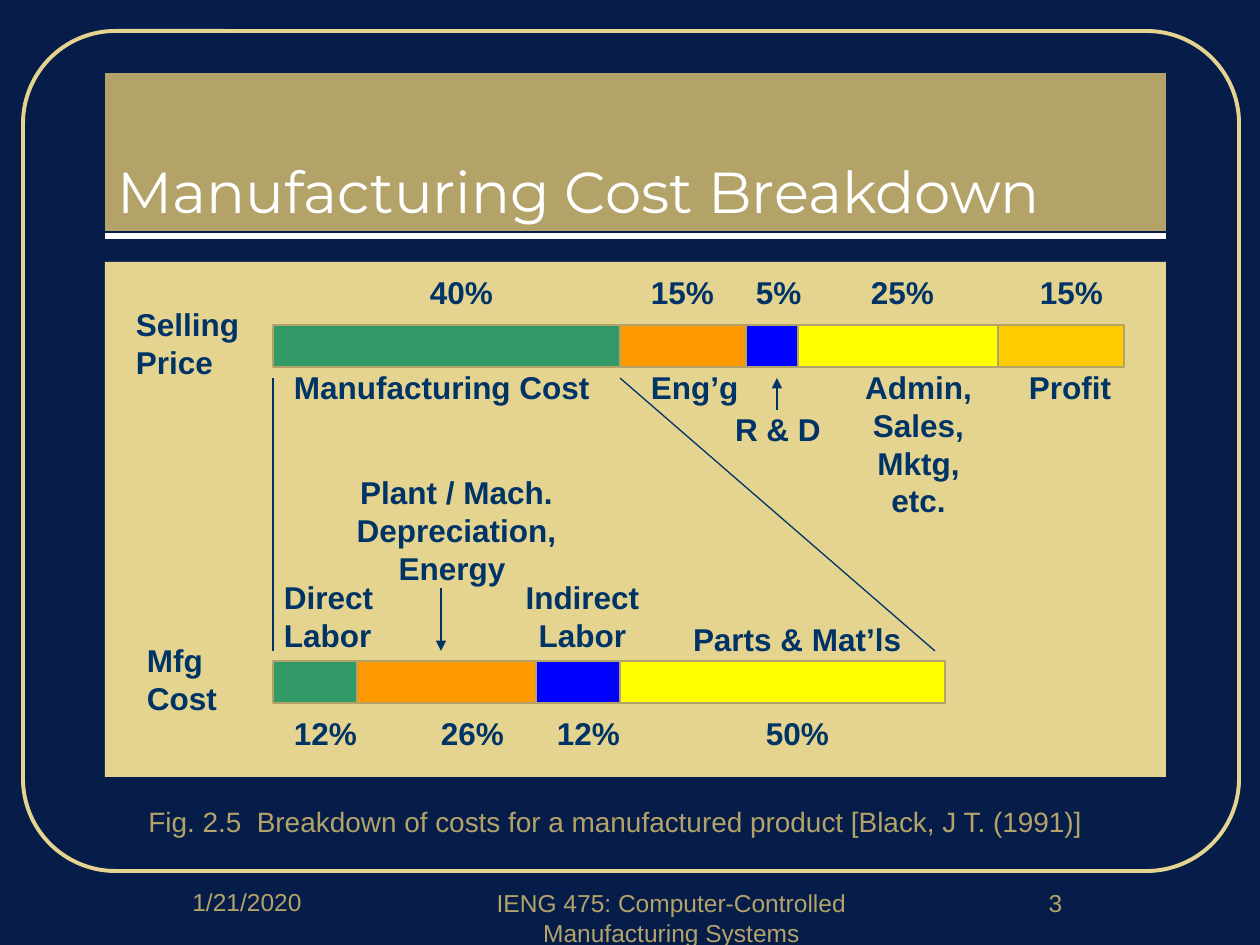
"""Builds the manufacturing cost breakdown slide."""
import itertools

import pptx
import pptx.util
import pptx.dml.color
import pptx.enum.shapes
import pptx.enum.text
import pptx.oxml.ns
from lxml import etree

PX = 914400 / 126
COLORS = {
    "navy": "071D49", "gold": "B3A369", "sand": "E4D490", "white": "FFFFFF",
    "ink": "003366", "green": "339966", "orange": "FF9900", "blue": "0000FF",
    "yellow": "FFFF00", "amber": "FFCC00",
}
RGB = {k: pptx.dml.color.RGBColor.from_string(v) for k, v in COLORS.items()}
ALIGN = {"l": pptx.enum.text.PP_ALIGN.LEFT, "c": pptx.enum.text.PP_ALIGN.CENTER}
SHAPE = pptx.enum.shapes.MSO_SHAPE
STRAIGHT = pptx.enum.shapes.MSO_CONNECTOR.STRAIGHT

prs = pptx.Presentation()
prs.slide_width = pptx.util.Inches(10)
prs.slide_height = pptx.util.Inches(7.5)
s = prs.slides.add_slide(prs.slide_layouts[5])
s.background.fill.solid()
s.background.fill.fore_color.rgb = RGB["navy"]


def add_box(box, fill=None, line=None, width=0.75, kind=SHAPE.RECTANGLE):
    sp = s.shapes.add_shape(kind, *(round(v * PX) for v in box))
    sp.shadow.inherit = False
    if fill:
        sp.fill.solid()
        sp.fill.fore_color.rgb = RGB[fill]
    else:
        sp.fill.background()
    if line:
        sp.line.color.rgb = RGB[line]
        sp.line.width = pptx.util.Pt(width)
    else:
        sp.line.fill.background()
    return sp


def write(sp, text, size, color, align="l", font="Arial", bold=False):
    tf = sp.text_frame
    tf.word_wrap = True
    p = tf.paragraphs[0]
    p.alignment = ALIGN[align]
    r = p.add_run()
    r.text = text
    r.font.size = pptx.util.Pt(size)
    r.font.name = font
    r.font.bold = bold
    r.font.color.rgb = RGB[color]
    return tf


frame = add_box((23, 31, 1216, 840), line="sand", width=2.25, kind=SHAPE.ROUNDED_RECTANGLE)
frame.adjustments[0] = 0.11
add_box((105, 262, 1061, 515), "sand")

title = s.shapes.title
title.left, title.top, title.width, title.height = (round(v * PX) for v in (105, 73, 1061, 158))
title.fill.solid()
title.fill.fore_color.rgb = RGB["gold"]
tf = write(title, "Manufacturing Cost Breakdown", 33, "white", font="Montserrat")
tf.vertical_anchor = pptx.enum.text.MSO_ANCHOR.BOTTOM
tf.auto_size = pptx.enum.text.MSO_AUTO_SIZE.NONE

bars = [
    (325, 273, [(620, "green"), (746, "orange"), (798, "blue"), (998, "yellow"), (1124, "amber")]),
    (661, 273, [(357, "green"), (536, "orange"), (620, "blue"), (945, "yellow")]),
]
for top, start, parts in bars:
    edges = [start] + [end for end, color in parts]
    for (left, right), (end, color) in zip(itertools.pairwise(edges), parts):
        add_box((left, top, right - left, 42), color, "gold")

lines = [
    ((105, 236), (1166, 236), "white", 3, False),
    ((273, 378), (273, 651), "ink", 0.75, False),
    ((620, 378), (935, 651), "ink", 0.75, False),
    ((441, 588), (441, 651), "ink", 0.75, True),
    ((777, 410), (777, 378), "ink", 0.75, True),
]
for start, end, color, width, arrow in lines:
    cx = s.shapes.add_connector(STRAIGHT, *(round(v * PX) for v in start + end))
    cx.line.color.rgb = RGB[color]
    cx.line.width = pptx.util.Pt(width)
    if arrow:
        ln = cx.line._get_or_add_ln()
        etree.SubElement(ln, pptx.oxml.ns.qn("a:tailEnd"), type="triangle")
    etree.SubElement(cx._element.spPr, pptx.oxml.ns.qn("a:effectLst"))

labels = [
    ("Selling Price", 136, 305, 116, 76, "l"),
    ("Manufacturing Cost", 294, 368, 305, 38, "l"),
    ("Eng’g", 651, 368, 95, 38, "l"),
    ("R & D", 735, 410, 95, 38, "l"),
    ("Admin, Sales, Mktg, etc.", 861, 368, 115, 151, "c"),
    ("Profit", 1029, 368, 95, 38, "l"),
    ("Mfg Cost", 147, 641, 105, 76, "l"),
    ("Direct Labor", 284, 578, 115, 76, "l"),
    ("Plant / Mach. Depreciation, Energy ", 356, 473, 201, 113, "c"),
    ("Indirect Labor", 525, 578, 115, 76, "c"),
    ("Parts & Mat’ls", 693, 620, 210, 38, "l"),
]
shares = [
    (273, [("40%", 430), ("15%", 651), ("5%", 756), ("25%", 871), ("15%", 1040)]),
    (714, [("12%", 294), ("26%", 441), ("12%", 557), ("50%", 766)]),
]
for top, items in shares:
    labels += [(text, left, top, 64, 38, "l") for text, left in items]
for text, left, top, width, height, align in labels:
    sp = s.shapes.add_textbox(*(round(v * PX) for v in (left, top, width, height)))
    tf = write(sp, text, 18, "ink", align, bold=True)
    tf.margin_left = tf.margin_top = tf.margin_right = tf.margin_bottom = 0

notes = [
    ("Fig. 2.5  Breakdown of costs for a manufactured product [Black, J T. (1991)]",
     (136, 798, 1018, 47), 16, "l"),
    ("1/21/2020", (105, 881, 284, 63), 14, "c"),
    ("IENG 475: Computer-Controlled Manufacturing Systems", (451, 882, 441, 63), 14, "c"),
    ("3", (945, 882, 221, 63), 14, "c"),
]
for text, box, size, align in notes:
    sp = s.shapes.add_textbox(*(round(v * PX) for v in box))
    write(sp, text, size, "gold", align)

prs.save("out.pptx")
